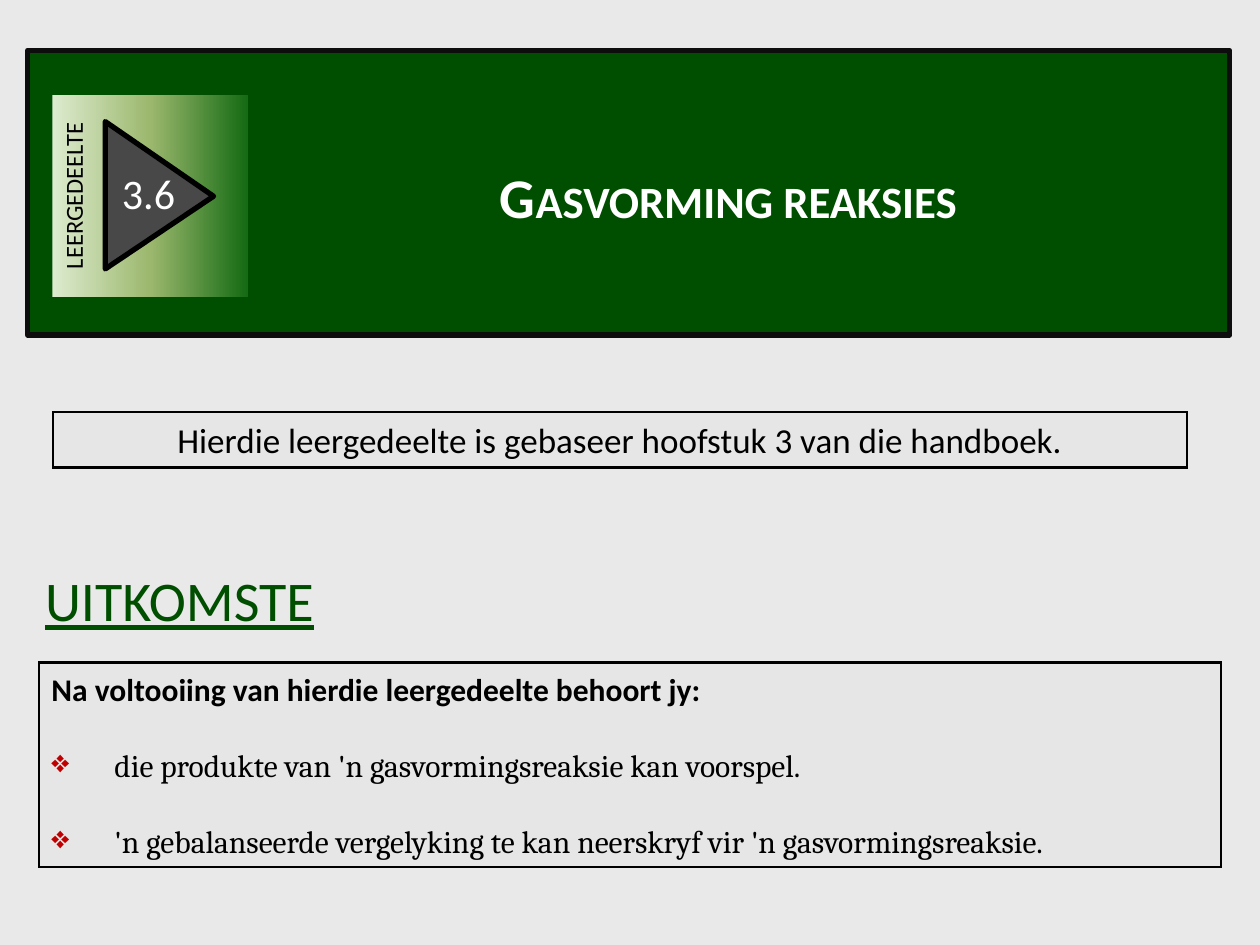
"""Build the opening slide of study section 3.6 on gas-forming reactions."""
from copy import deepcopy

from lxml.etree import SubElement
from pptx import Presentation
from pptx.dml.color import RGBColor
from pptx.enum.shapes import MSO_SHAPE as SHAPE
from pptx.enum.text import MSO_ANCHOR as ANCHOR, MSO_AUTO_SIZE as AUTO, PP_ALIGN as ALIGN
from pptx.oxml.ns import qn
from pptx.util import Pt


def rgb(value):
    return RGBColor.from_string(value)


def write(sp, lines, anchor=ANCHOR.TOP, wrap=True):
    tf = sp.text_frame
    tf.word_wrap, tf.vertical_anchor = wrap, anchor
    tf.auto_size = AUTO.SHAPE_TO_FIT_TEXT
    for i, (text, align, color, font) in enumerate(lines):
        p = tf.add_paragraph() if i else tf.paragraphs[0]
        p.alignment = align
        r = p.add_run()
        r.text = text
        r.font.color.rgb = rgb(color)
        for name, value in font.items():
            setattr(r.font, name, value)
    return tf


prs = Presentation()
prs.slide_width, prs.slide_height = Pt(720), Pt(540)
s = prs.slides.add_slide(prs.slide_layouts[6])
s.background.fill.solid()
s.background.fill.fore_color.rgb = rgb("E9E9E9")

banner = s.shapes.add_shape(SHAPE.RECTANGLE, Pt(15.84), Pt(28.8), Pt(686.88), Pt(162.72))
title = s.shapes.add_textbox(Pt(151.92), Pt(89.28), Pt(528.48), Pt(46.08))
badge = s.shapes.add_group_shape()
label = badge.shapes.add_shape(SHAPE.RECTANGLE, Pt(28.08), Pt(56.16), Pt(115.2), Pt(111.6))
arrow = badge.shapes.add_shape(SHAPE.ISOSCELES_TRIANGLE, Pt(48.96), Pt(80.64), Pt(84.24), Pt(61.92))
number = badge.shapes.add_textbox(Pt(62.64), Pt(92.16), Pt(45.36), Pt(36))
heading = s.shapes.add_textbox(Pt(18.72), Pt(319.68), Pt(192.24), Pt(46.08))
outcomes = s.shapes.add_shape(SHAPE.RECTANGLE, Pt(22.32), Pt(378.72), Pt(675.36), Pt(116.64))
basis = s.shapes.add_shape(SHAPE.RECTANGLE, Pt(30.24), Pt(235.44), Pt(648), Pt(31.68))

for sp, fill, line, width, join in [
    (banner, "004E00", "0D0D0D", 3, "round"),
    (arrow, "484848", "000000", 3, "round"),
    (outcomes, "E6E6E6", "000000", 1.5, "miter"),
    (basis, "E6E6E6", "000000", 1.5, "miter"),
]:
    sp.shadow.inherit = False
    sp.fill.solid()
    sp.fill.fore_color.rgb = rgb(fill)
    sp.line.color.rgb = rgb(line)
    sp.line.width = Pt(width)
    SubElement(sp.line._get_or_add_ln(), qn(f"a:{join}"))

arrow.rotation = 90
arrow.adjustments[0] = 0.507
label.rotation = 270
label.shadow.inherit = False
label.line.fill.background()
label.fill.gradient()
label.fill.gradient_angle = 270
stops = label.fill._fill._gradFill.gsLst
stops.append(deepcopy(stops[-1]))
for stop, position, color in zip(label.fill.gradient_stops, (0, 0.5, 1), ("DDEBCF", "9CB86E", "156B13")):
    stop.position = position
    stop.color.rgb = rgb(color)

tf = write(title, [("Gasvorming reaksies", ALIGN.CENTER, "FFFFFF",
                    {"name": "Calibri", "size": Pt(32), "bold": True})])
tf.paragraphs[0].runs[0].font._element.set("cap", "small")
write(label, [("LEERGEDEELTE", ALIGN.CENTER, "000000", {"name": "Calibri", "size": Pt(14)})])
write(number, [("3.6", ALIGN.LEFT, "FFFFFF", {"name": "Calibri", "size": Pt(24)})], wrap=False)
write(heading, [("UITKOMSTE", ALIGN.LEFT, "004E00",
                 {"name": "Calibri", "size": Pt(32), "underline": True})])
write(basis, [("Hierdie leergedeelte is gebaseer hoofstuk 3 van die handboek.", ALIGN.CENTER,
               "000000", {"name": "Calibri", "size": Pt(20)})], ANCHOR.MIDDLE)

item = {"name": "Cambria", "size": Pt(18)}
tf = write(outcomes, [
    ("Na voltooiing van hierdie leergedeelte behoort jy:", ALIGN.LEFT, "000000",
     {"name": "Calibri", "size": Pt(18), "bold": True}),
    ("die produkte van 'n gasvormingsreaksie kan voorspel.", ALIGN.LEFT, "000000", item),
    ("'n gebalanseerde vergelyking te kan neerskryf vir 'n gasvormingsreaksie.",
     ALIGN.LEFT, "000000", item),
], ANCHOR.MIDDLE)
for p in tf.paragraphs[1:]:
    p.space_before = Pt(22)
    pPr = p._p.get_or_add_pPr()
    pPr.set("marL", str(Pt(36)))
    pPr.set("indent", str(-Pt(36)))
    SubElement(SubElement(pPr, qn("a:buClr")), qn("a:srgbClr"), val="C00000")
    SubElement(pPr, qn("a:buChar"), char="❖")

prs.save("out.pptx")
